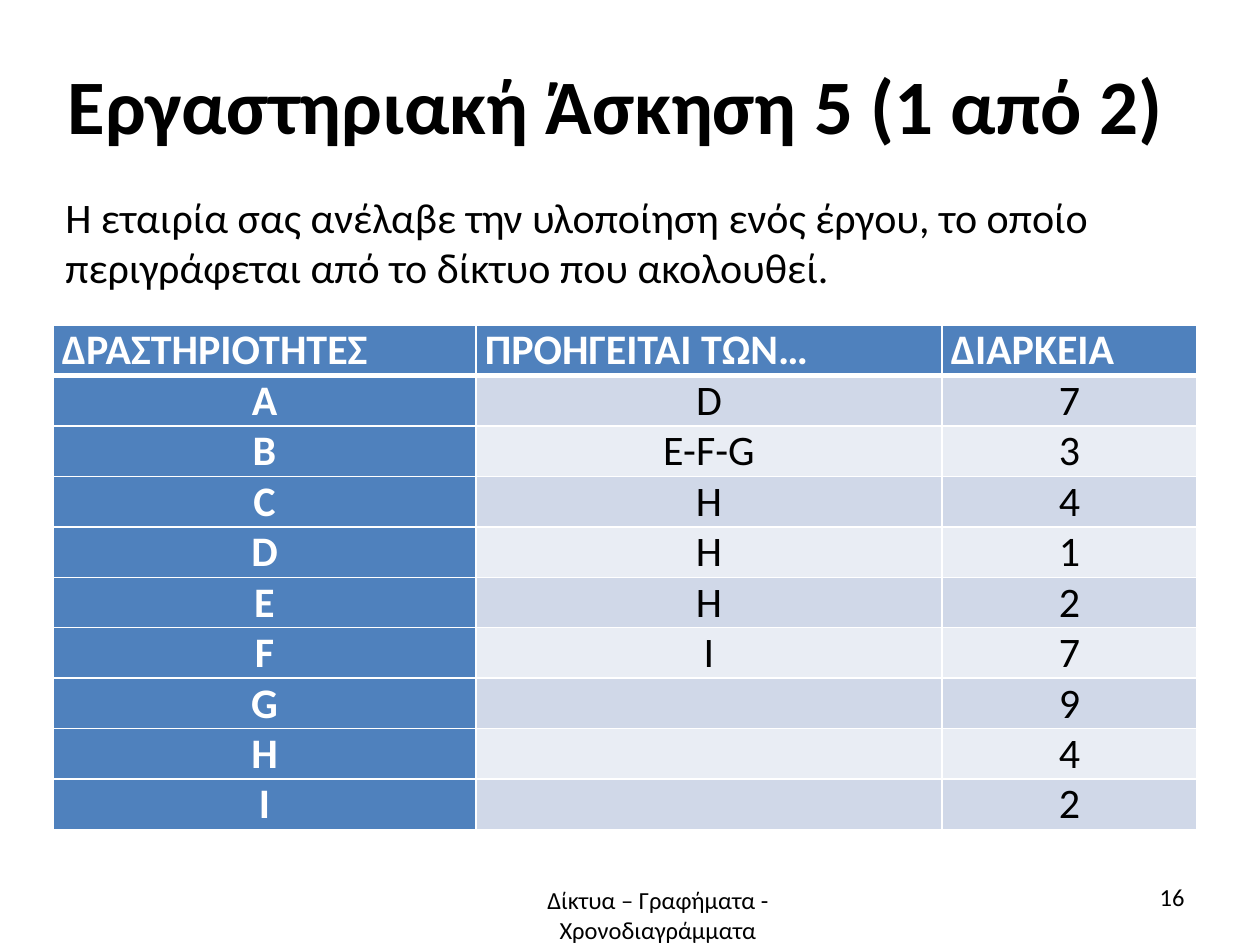
from lxml import etree
from pptx import Presentation
from pptx.dml.color import RGBColor
from pptx.enum import text
from pptx.oxml.ns import qn
from pptx.util import Pt

PX = 914400 / 126
BLACK, WHITE, BLUE = "000000", "FFFFFF", "4F81BD"
BANDS = ("D0D8E8", "E9EDF4")
LEFT, WIDTH = 53, 1144

HEADINGS = ("ΔΡΑΣΤΗΡΙΟΤΗΤΕΣ", "ΠΡΟΗΓΕΙΤΑΙ ΤΩΝ…", "ΔΙΑΡΚΕΙΑ")
ACTIVITIES = (
    ("A", "D", "7"),
    ("B", "E-F-G", "3"),
    ("C", "H", "4"),
    ("D", "H", "1"),
    ("E", "H", "2"),
    ("F", "I", "7"),
    ("G", "", "9"),
    ("H", "", "4"),
    ("I", "", "2"),
)


def emu(px):
    return round(px * PX)


def color(hex_value):
    return RGBColor.from_string(hex_value)


def set_format(target, values):
    for name, value in values.items():
        setattr(target, name, value)


class SlideBuilder:
    """Holds the font and the current slide."""

    def __init__(self, slide, font="Calibri"):
        self.slide = slide
        self.font = font

    def add_words(self, frame, words, size, align, bold=False, ink=BLACK):
        paragraph = frame.paragraphs[0]
        paragraph.alignment = align
        run = paragraph.add_run()
        run.text = words
        set_format(run.font, {"name": self.font, "size": Pt(size), "bold": bold})
        run.font.color.rgb = color(ink)

    def text_box(self, box, words, size, align, bold=False, **frame_format):
        frame = self.slide.shapes.add_textbox(*map(emu, box)).text_frame
        set_format(frame, {"word_wrap": True, **frame_format})
        self.add_words(frame, words, size, align, bold)

    def borders(self, cell, widths):
        """Draw white cell borders; widths are points for left, right, top, bottom."""
        properties = cell._tc.get_or_add_tcPr()
        for place, (side, width) in enumerate(zip("LRTB", widths)):
            line = etree.Element(qn(f"a:ln{side}"), w=str(Pt(width)))
            fill = etree.SubElement(line, qn("a:solidFill"))
            etree.SubElement(fill, qn("a:srgbClr"), val=WHITE)
            properties.insert(place, line)

    def cell(self, cell, words, fill, **style):
        side = emu(9)
        set_format(cell, {"margin_left": side, "margin_right": side,
                          "margin_top": 0, "margin_bottom": 0})
        cell.fill.solid()
        cell.fill.fore_color.rgb = color(fill)
        if words:
            self.add_words(cell.text_frame, words, 24, **style)

    def table(self, box, column_widths, headings, rows):
        table = self.slide.shapes.add_table(
            len(rows) + 1, len(headings), *map(emu, box)).table
        for column, width in zip(table.columns, column_widths):
            column.width = emu(width)
        for r, row in enumerate((headings, *rows)):
            for c, words in enumerate(row):
                strong = r == 0 or c == 0
                cell = table.cell(r, c)
                self.cell(
                    cell, words, BLUE if strong else BANDS[(r - 1) % 2],
                    align=text.PP_ALIGN.CENTER if r else text.PP_ALIGN.JUSTIFY,
                    bold=strong, ink=WHITE if strong else BLACK)
                self.borders(cell, (1, 1, 3 if r == 1 else 1, 3 if r == 0 else 1))


def main():
    deck = Presentation()
    deck.slide_width, deck.slide_height = emu(1260), emu(945)
    page = SlideBuilder(deck.slides.add_slide(deck.slide_layouts[6]))
    align = text.PP_ALIGN

    page.text_box((LEFT, 20, WIDTH, 165), "Εργαστηριακή Άσκηση 5 (1 από 2) ", 44,
                  align.CENTER, bold=True, vertical_anchor=text.MSO_ANCHOR.MIDDLE,
                  margin_left=0, margin_right=0, margin_top=emu(3), margin_bottom=0)
    page.text_box((LEFT, 185, WIDTH, 115),
                  "Η εταιρία σας ανέλαβε την υλοποίηση ενός έργου, το οποίο "
                  "περιγράφεται από το δίκτυο που ακολουθεί.", 24, align.LEFT,
                  auto_size=text.MSO_AUTO_SIZE.SHAPE_TO_FIT_TEXT)
    page.table((LEFT, 325, WIDTH, 504), (423, 466, 255), HEADINGS, ACTIVITIES)
    page.text_box((438, 879, 440, 69), "Δίκτυα – Γραφήματα - Χρονοδιαγράμματα",
                  14, align.CENTER)
    page.text_box((903, 876, 294, 50), "16", 14, align.RIGHT)

    deck.save("out.pptx")


if __name__ == "__main__":
    main()
